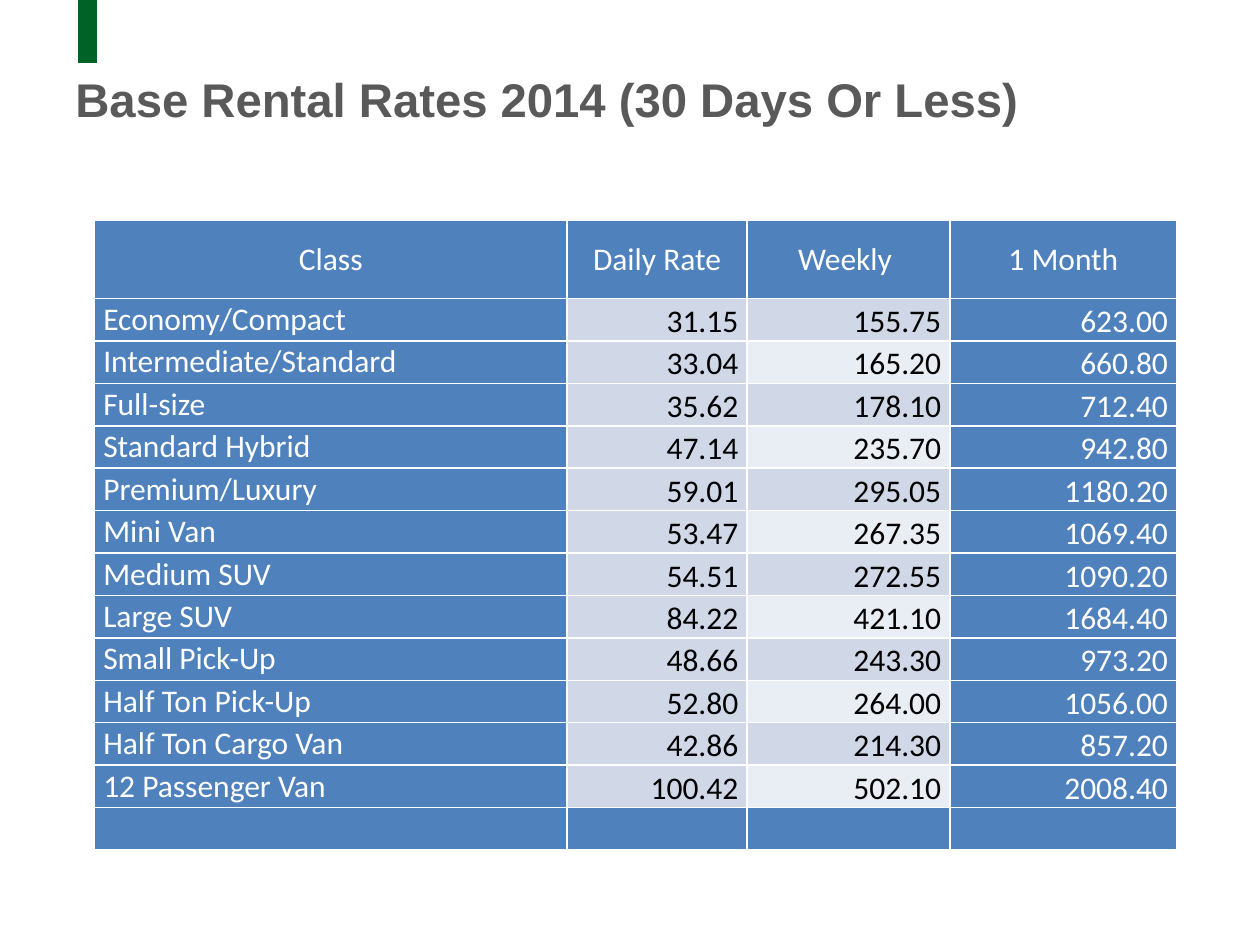
from lxml.etree import SubElement
from pptx import Presentation
from pptx.dml.color import RGBColor
from pptx.enum.shapes import MSO_SHAPE
from pptx.enum.text import MSO_ANCHOR, PP_ALIGN
from pptx.oxml.ns import qn
from pptx.util import Inches, Pt

TITLE = "Base Rental Rates 2014 (30 Days Or Less)"
HEADER = ("Class", "Daily Rate", "Weekly ", "1 Month")
RATES = [
    ("Economy/Compact", "31.15", "155.75", "623.00"),
    ("Intermediate/Standard", "33.04", "165.20", "660.80"),
    ("Full-size", "35.62", "178.10", "712.40"),
    ("Standard Hybrid", "47.14", "235.70", "942.80"),
    ("Premium/Luxury", "59.01", "295.05", "1180.20"),
    ("Mini Van", "53.47", "267.35", "1069.40"),
    ("Medium SUV", "54.51", "272.55", "1090.20"),
    ("Large SUV", "84.22", "421.10", "1684.40"),
    ("Small Pick-Up", "48.66", "243.30", "973.20"),
    ("Half Ton Pick-Up", "52.80", "264.00", "1056.00"),
    ("Half Ton Cargo Van", "42.86", "214.30", "857.20"),
    ("12 Passenger Van", "100.42", "502.10", "2008.40"),
]
FOOTER = ("", "", "", "")
ROWS = [HEADER, *RATES, FOOTER]
COLUMN_WIDTHS = (3.75, 1.43, 1.61, 1.8)
HEADER_HEIGHT = 0.62
BODY_HEIGHT = 4.38
GREEN, GREY, BLUE = "006325", "595959", "4F81BD"
DARK_BAND, LIGHT_BAND = "D0D8E8", "E9EDF4"
WHITE, BLACK = "FFFFFF", "000000"


def paint(target, color):
    if hasattr(target, "solid"):
        target.solid()
        target = target.fore_color
    target.rgb = RGBColor.from_string(color)


def add_text(para, text, font, size, color, bold=False):
    span = para.add_run()
    span.text = text
    span.font.name = font
    span.font.size = Pt(size)
    span.font.bold = bold
    paint(span.font.color, color)


def add_borders(cell, color, width):
    properties = cell._tc.get_or_add_tcPr()
    for position, side in enumerate(("lnL", "lnR", "lnT", "lnB")):
        line = SubElement(properties, qn(f"a:{side}"), w=str(Pt(width)))
        fill = SubElement(line, qn("a:solidFill"))
        SubElement(fill, qn("a:srgbClr"), val=color)
        properties.insert(position, line)


def cell_style(row, column):
    if row == 0:
        return BLUE, WHITE, PP_ALIGN.CENTER, MSO_ANCHOR.MIDDLE
    if column == 0 or row == len(ROWS) - 1:
        return BLUE, WHITE, PP_ALIGN.LEFT, MSO_ANCHOR.MIDDLE
    if column == 3:
        return BLUE, WHITE, PP_ALIGN.RIGHT, MSO_ANCHOR.BOTTOM
    light = column == 2 and row % 2 == 0
    return LIGHT_BAND if light else DARK_BAND, BLACK, PP_ALIGN.RIGHT, MSO_ANCHOR.BOTTOM


def add_title(page):
    bar = page.shapes.add_shape(
        MSO_SHAPE.RECTANGLE, Inches(0.62), 0, Inches(0.15), Inches(0.5))
    bar.shadow.inherit = False
    paint(bar.fill, GREEN)
    bar.line.fill.background()
    box = page.shapes.add_textbox(
        Inches(0.5), Inches(0.51), Inches(8.65), Inches(0.75))
    box.text_frame.word_wrap = True
    add_text(box.text_frame.paragraphs[0], TITLE, "Arial", 27, GREY, True)


def add_rates(page):
    table = page.shapes.add_table(
        len(ROWS), len(HEADER), Inches(0.75), Inches(1.75),
        Inches(sum(COLUMN_WIDTHS)), Inches(HEADER_HEIGHT + BODY_HEIGHT)).table
    for column, width in zip(table.columns, COLUMN_WIDTHS):
        column.width = Inches(width)
    for index, row in enumerate(table.rows):
        row.height = Inches(BODY_HEIGHT / (len(ROWS) - 1) if index else HEADER_HEIGHT)
    for row, texts in enumerate(ROWS):
        for column, text in enumerate(texts):
            fill, color, alignment, anchor = cell_style(row, column)
            cell = table.cell(row, column)
            cell.margin_left = cell.margin_right = Inches(0.07)
            cell.margin_top = cell.margin_bottom = 0
            cell.vertical_anchor = anchor
            paint(cell.fill, fill)
            add_borders(cell, WHITE, 1)
            para = cell.text_frame.paragraphs[0]
            para.alignment = alignment
            if text:
                add_text(para, text, "Calibri", 18, color)


def main():
    deck = Presentation()
    deck.slide_width = Inches(10)
    deck.slide_height = Inches(7.5)
    page = deck.slides.add_slide(deck.slide_layouts[6])
    add_title(page)
    add_rates(page)
    deck.save("out.pptx")


if __name__ == "__main__":
    main()
